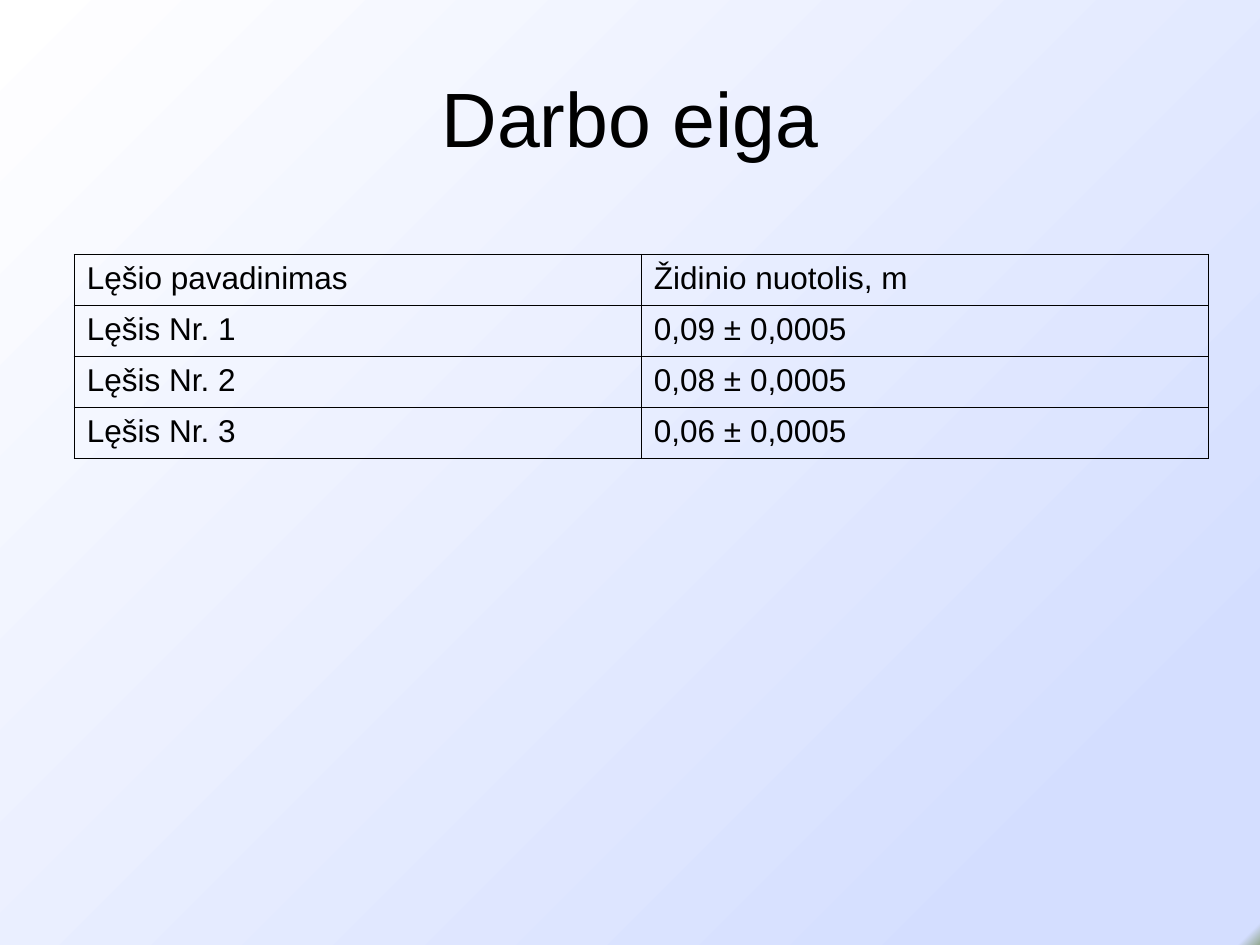
from typing import NamedTuple

from lxml import etree
from pptx import Presentation
from pptx.dml.color import RGBColor
from pptx.enum.text import MSO_ANCHOR, PP_ALIGN
from pptx.oxml.ns import qn
from pptx.util import Inches, Pt

LEFT, CENTER = PP_ALIGN.LEFT, PP_ALIGN.CENTER
TOP, MIDDLE = MSO_ANCHOR.TOP, MSO_ANCHOR.MIDDLE

BLACK = RGBColor(0x00, 0x00, 0x00)
WHITE = RGBColor(0xFF, 0xFF, 0xFF)
PALE_BLUE = RGBColor(0xD4, 0xDE, 0xFF)
SAGE = RGBColor(0x96, 0xAB, 0x94)

FONT = "Arial"
SLIDE_W, SLIDE_H = Inches(10), Inches(7.5)


class Stop(NamedTuple):
    percent: int
    color: RGBColor


class LensRow(NamedTuple):
    name: str
    focal_length: str


STOPS = [Stop(0, WHITE), Stop(87, PALE_BLUE), Stop(99, PALE_BLUE), Stop(100, SAGE)]
ROWS = [
    LensRow("Lęšio pavadinimas", "Židinio nuotolis, m"),
    LensRow("Lęšis Nr. 1", "0,09 ± 0,0005"),
    LensRow("Lęšis Nr. 2", "0,08 ± 0,0005"),
    LensRow("Lęšis Nr. 3", "0,06 ± 0,0005"),
]


def write(tf, text: str, *, size: int, align=LEFT, anchor=TOP) -> None:
    tf.word_wrap = True
    tf.vertical_anchor = anchor
    p = tf.paragraphs[0]
    p.alignment = align
    r = p.add_run()
    r.text = text
    r.font.name, r.font.size = FONT, Pt(size)
    r.font.color.rgb = BLACK


def paint_background(s, stops: list[Stop]) -> None:
    fill = s.background.fill
    fill.gradient()
    fill.gradient_angle = 315  # counter-clockwise: top left to bottom right
    gs_list = s.element.find(".//" + qn("a:gsLst"))
    for gs in list(gs_list):
        gs_list.remove(gs)
    for stop in stops:
        gs = etree.SubElement(gs_list, qn("a:gs"), pos=str(stop.percent * 1000))
        etree.SubElement(gs, qn("a:srgbClr"), val=str(stop.color))


def add_borders(cell, color: RGBColor, width: float) -> None:
    tc_pr = cell._tc.get_or_add_tcPr()
    for side in ("L", "R", "T", "B"):
        ln = etree.SubElement(tc_pr, qn(f"a:ln{side}"), w=str(Pt(width)))
        fill = etree.SubElement(ln, qn("a:solidFill"))
        etree.SubElement(fill, qn("a:srgbClr"), val=str(color))


def add_lens_table(s, rows: list[LensRow]) -> None:
    table = s.shapes.add_table(
        len(rows), len(LensRow._fields), Inches(0.59), Inches(2.02),
        int(SLIDE_W * 0.9), Inches(0.405) * len(rows),
    ).table
    table.first_row = table.horz_banding = False
    for i, row in enumerate(rows):
        for j, text in enumerate(row):
            cell = table.cell(i, j)
            add_borders(cell, BLACK, 1)
            cell.fill.background()
            write(cell.text_frame, text, size=18)


def main() -> None:
    prs = Presentation()
    prs.slide_width, prs.slide_height = SLIDE_W, SLIDE_H
    s = prs.slides.add_slide(prs.slide_layouts[6])
    paint_background(s, STOPS)

    # Title
    sp = s.shapes.add_textbox(
        int(SLIDE_W * 0.05), int(SLIDE_H * 0.04), int(SLIDE_W * 0.9), Inches(1.25)
    )
    write(sp.text_frame, "Darbo eiga", size=44, align=CENTER, anchor=MIDDLE)

    # Focal lengths of the lenses
    add_lens_table(s, ROWS)
    prs.save("out.pptx")


if __name__ == "__main__":
    main()
